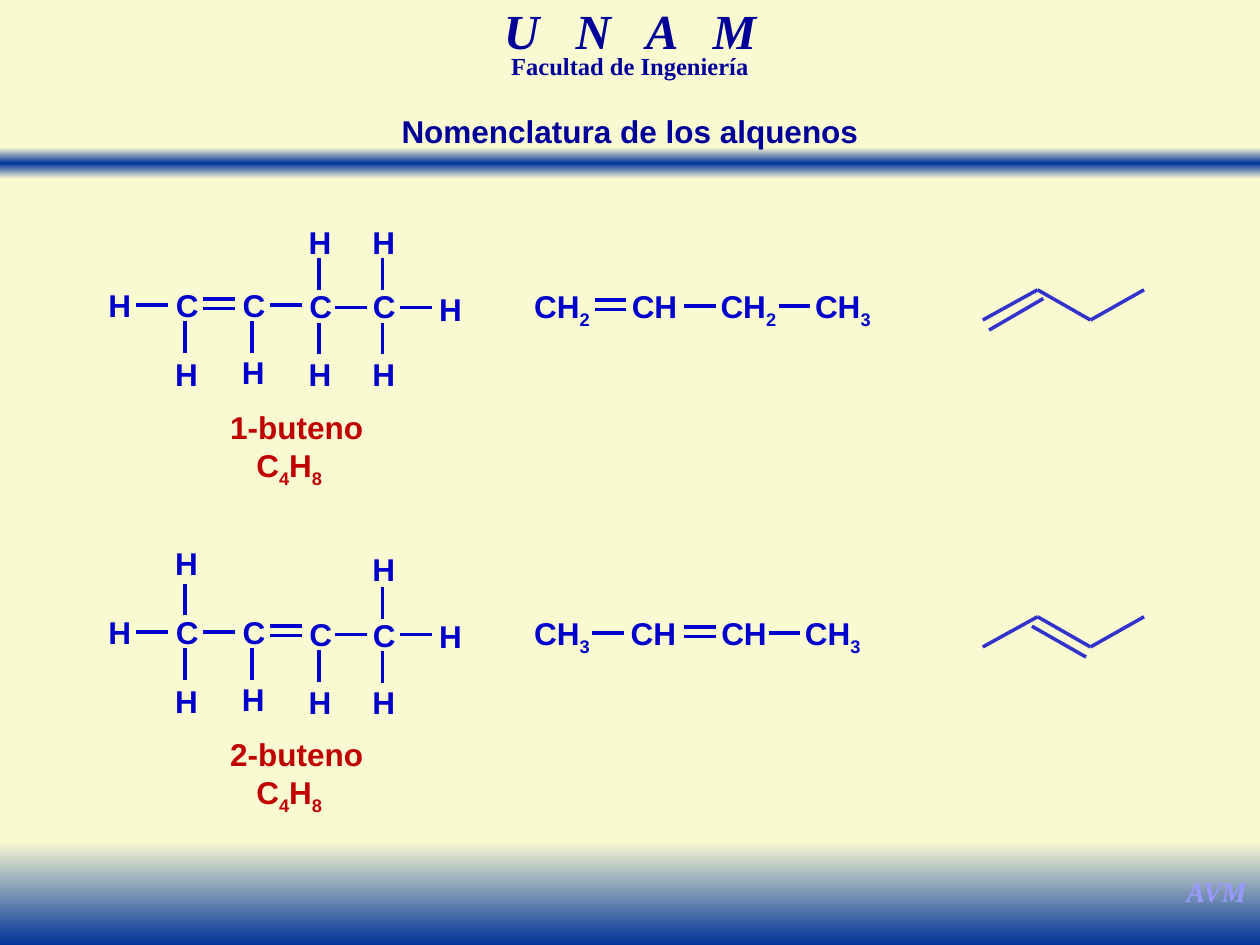
"""Build a slide that compares the structures of 1-butene and 2-butene."""
from dataclasses import dataclass
from itertools import groupby, pairwise
from typing import NamedTuple, Optional

from lxml.etree import SubElement
from pptx import Presentation
from pptx.dml.color import RGBColor
from pptx.enum.shapes import MSO_CONNECTOR, MSO_SHAPE
from pptx.enum.text import MSO_AUTO_SIZE as AutoSize, PP_ALIGN as Align
from pptx.oxml.ns import qn
from pptx.util import Inches, Pt

SLIDE_WIDTH, SLIDE_HEIGHT = Inches(10), Inches(7.5)
GRID_COLUMNS, GRID_ROWS = 100, 75
COLORS = {
    "cream": "FAFAD2", "band": "003399", "heading": "000099", "signature": "9999FF",
    "name": "C00000", "atom": "0000CC", "skeleton": "3333CC",
}
ATOM_COLUMNS = (9.5, 14.85, 20.15, 25.45, 30.5, 35.75)
BOND_DROPS = (0, 0, 0, 0.2, 0.2)
ZIGZAG_COLUMNS = (78, 82.35, 86.55, 90.8)
ZIGZAG_DROPS = (1.2, -1.2, 1.2, -1.2)
BOND_LENGTH = 2.5
PAIR_OFFSET = 0.38


class Point(NamedTuple):
    column: float
    row: float


class Carbon(NamedTuple):
    drop: float
    upper: Optional[float]
    lower: float


class Fragment(NamedTuple):
    formula: str
    column: float


class Bond(NamedTuple):
    column: float
    double: bool = False


@dataclass(frozen=True)
class Alkene:
    name: str
    axis: float
    double_bond: int
    carbons: tuple[Carbon, ...]
    fragments: tuple[Fragment, ...]
    fragment_bonds: tuple[Bond, ...]
    inner_line: tuple[Point, Point]


ALKENES = (
    Alkene(
        "1-buteno", 24.2, 1,
        (Carbon(0, None, 5.5), Carbon(0, None, 5.3),
         Carbon(0.1, -5, 5.5), Carbon(0.1, -5, 5.5)),
        (Fragment("CH2", 44.6), Fragment("CH", 51.95),
         Fragment("CH2", 59.4), Fragment("CH3", 66.9)),
        (Bond(47.2, True), Bond(54.3), Bond(61.8)),
        (Point(78.5, 2), Point(82.8, -0.5)),
    ),
    Alkene(
        "2-buteno", 50.15, 2,
        (Carbon(0, -5.5, 5.5), Carbon(0, None, 5.35),
         Carbon(0.15, None, 5.55), Carbon(0.25, -5, 5.55)),
        (Fragment("CH3", 44.6), Fragment("CH", 51.85),
         Fragment("CH", 59.05), Fragment("CH3", 66.1)),
        (Bond(47), Bond(54.3, True), Bond(61)),
        (Point(86.2, 2), Point(81.9, -0.45)),
    ),
)


def across(columns: float) -> int:
    """Convert grid columns to a length."""
    return round(SLIDE_WIDTH * columns / GRID_COLUMNS)


def down(rows: float) -> int:
    """Convert grid rows to a length."""
    return round(SLIDE_HEIGHT * rows / GRID_ROWS)


def write(shapes, text: str, center: Point, *, color: str = "atom", size: float = 18,
          font: str = "Arial", italic: bool = False, subscripts: bool = False,
          width: float = 3.9, height: float = 4, line_spacing: Optional[float] = None,
          tracking: float = 0) -> None:
    """Write bold text centred on a grid point."""
    box = shapes.add_textbox(across(center.column - width / 2), down(center.row - height / 2),
                             across(width), down(height))
    frame = box.text_frame
    frame.word_wrap = False
    frame.auto_size = AutoSize.SHAPE_TO_FIT_TEXT
    paragraph = frame.paragraphs[0]
    paragraph.alignment = Align.CENTER
    if line_spacing:
        paragraph.line_spacing = line_spacing
    for lowered, letters in groupby(text, lambda letter: subscripts and letter.isdigit()):
        run = paragraph.add_run()
        run.text = "".join(letters)
        run.font.name, run.font.size = font, Pt(size)
        run.font.bold, run.font.italic = True, italic
        run.font.color.rgb = RGBColor.from_string(COLORS[color])
        if lowered:
            run.font._element.set("baseline", "-25000")
        if tracking:
            run.font._element.set("spc", str(round(tracking * 100)))


def draw_line(shapes, start: Point, end: Point, color: str = "atom") -> None:
    """Draw a straight line between two grid points."""
    line = shapes.add_connector(MSO_CONNECTOR.STRAIGHT, across(start.column), down(start.row),
                                across(end.column), down(end.row))
    line.line.width = Pt(2)
    line.line.color.rgb = RGBColor.from_string(COLORS[color])
    SubElement(line._element.spPr, qn("a:effectLst"))


def draw_bond(shapes, column: float, row: float, double: bool) -> None:
    """Draw a horizontal single or double bond."""
    for offset in (-PAIR_OFFSET, PAIR_OFFSET) if double else (0,):
        draw_line(shapes, Point(column, row + offset), Point(column + BOND_LENGTH, row + offset))


def draw_band(shapes, top: float, height: float, stops: tuple[str, ...]) -> None:
    """Draw a full-width band with an evenly stepped vertical gradient."""
    band = shapes.add_shape(MSO_SHAPE.RECTANGLE, 0, down(top), SLIDE_WIDTH, down(height))
    band.shadow.inherit = False
    band.line.fill.background()
    band.fill.gradient()
    gradient = band._element.spPr.find(qn("a:gradFill"))
    for part in list(gradient):
        gradient.remove(part)
    stop_list = SubElement(gradient, qn("a:gsLst"))
    for index, color in enumerate(stops):
        position = str(100000 * index // (len(stops) - 1))
        stop = SubElement(stop_list, qn("a:gs"), pos=position)
        SubElement(stop, qn("a:srgbClr"), val=COLORS[color])
    SubElement(gradient, qn("a:lin"), ang="5400000", scaled="0")


def draw_structural(shapes, alkene: Alkene) -> None:
    """Draw every atom and bond of the molecule."""
    axis = alkene.axis
    for index, (left, right) in enumerate(pairwise(ATOM_COLUMNS)):
        double = index == alkene.double_bond
        row = axis + BOND_DROPS[index] - (0.1 if double else 0)
        draw_bond(shapes, (left + right) / 2 - 1.35, row, double)
    write(shapes, "H", Point(ATOM_COLUMNS[0], axis))
    write(shapes, "H", Point(ATOM_COLUMNS[-1], axis + 0.3))
    for column, carbon in zip(ATOM_COLUMNS[1:-1], alkene.carbons):
        row = axis + carbon.drop
        write(shapes, "C", Point(column, row))
        for hydrogen, side in ((carbon.upper, -1), (carbon.lower, 1)):
            if hydrogen is not None:
                write(shapes, "H", Point(column - 0.05, axis + hydrogen))
                draw_line(shapes, Point(column - 0.15, row + 1.3 * side),
                          Point(column - 0.15, row + 3.8 * side))


def draw_condensed(shapes, alkene: Alkene) -> None:
    """Draw the condensed formula."""
    for bond in alkene.fragment_bonds:
        draw_bond(shapes, bond.column, alkene.axis + (0 if bond.double else 0.1), bond.double)
    for formula, column in alkene.fragments:
        write(shapes, formula, Point(column, alkene.axis + 0.1), width=6.6, subscripts=True)


def draw_skeletal(shapes, alkene: Alkene) -> None:
    """Draw the zigzag skeleton and its double bond."""
    corners = [Point(*corner) for corner in zip(ZIGZAG_COLUMNS, ZIGZAG_DROPS)]
    for start, end in [*pairwise(corners), alkene.inner_line]:
        draw_line(shapes, Point(start.column, alkene.axis + start.row),
                  Point(end.column, alkene.axis + end.row), "skeleton")


def main() -> None:
    """Assemble and save the slide."""
    deck = Presentation()
    deck.slide_width, deck.slide_height = SLIDE_WIDTH, SLIDE_HEIGHT
    slide = deck.slides.add_slide(deck.slide_layouts[6])
    slide.background.fill.solid()
    slide.background.fill.fore_color.rgb = RGBColor.from_string(COLORS["cream"])
    shapes = slide.shapes
    draw_band(shapes, 11.7, 2.5, ("cream", "band", "cream"))
    draw_band(shapes, 66.7, 8.3, ("cream", "band"))
    serif = "Times New Roman"
    write(shapes, "U N A M", Point(50, 2.95), color="heading", size=28, font=serif, italic=True,
          width=39.2, height=4.3, line_spacing=0.7, tracking=7)
    write(shapes, "Facultad de Ingeniería", Point(50, 5.5), color="heading", size=14, font=serif,
          width=35.8, height=2.6, line_spacing=0.7)
    write(shapes, "AVM", Point(96.55, 70.75), color="signature", size=16, font=serif,
          italic=True, width=6.9, height=3.7)
    write(shapes, "Nomenclatura de los alquenos", Point(50, 10.4), color="heading", width=38.6)
    for alkene in ALKENES:
        write(shapes, alkene.name, Point(23.55, alkene.axis + 9.7), color="name", width=12.7)
        write(shapes, "C4H8", Point(22.95, alkene.axis + 12.7), color="name", width=7.5,
              subscripts=True)
        for draw in (draw_structural, draw_condensed, draw_skeletal):
            draw(shapes.add_group_shape().shapes, alkene)
    deck.save("out.pptx")


if __name__ == "__main__":
    main()
